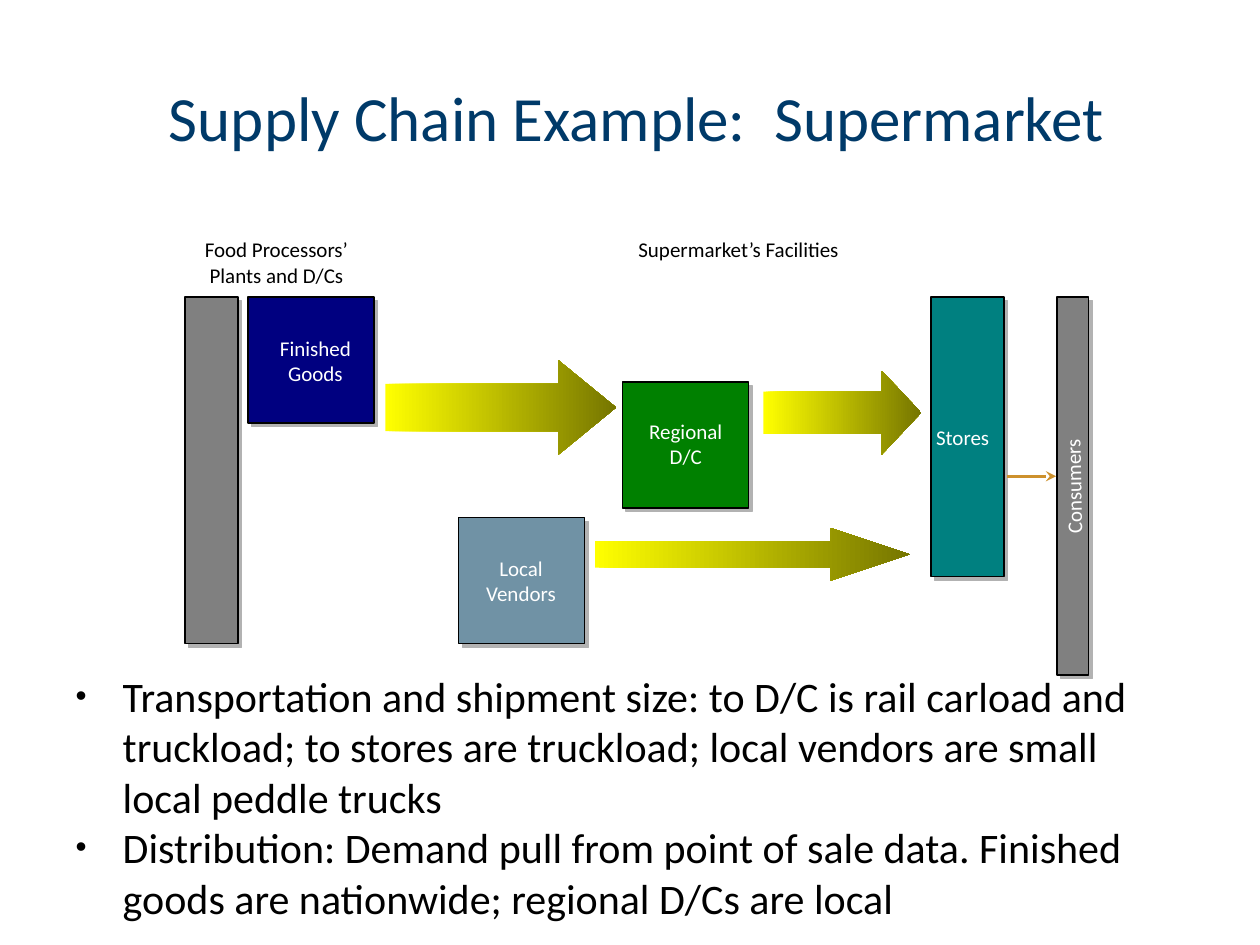
from lxml import etree
from pptx import Presentation
from pptx.dml.color import RGBColor
from pptx.enum.shapes import MSO_CONNECTOR, MSO_SHAPE
from pptx.enum.text import MSO_ANCHOR, MSO_AUTO_SIZE, PP_ALIGN
from pptx.oxml.ns import qn
from pptx.util import Cm, Pt

RECTANGLE = MSO_SHAPE.RECTANGLE
RIGHT_ARROW = MSO_SHAPE.RIGHT_ARROW
STRAIGHT = MSO_CONNECTOR.STRAIGHT
MIDDLE, TOP = MSO_ANCHOR.MIDDLE, MSO_ANCHOR.TOP
LEFT, CENTER = PP_ALIGN.LEFT, PP_ALIGN.CENTER
NO_FIT, GROW = MSO_AUTO_SIZE.NONE, MSO_AUTO_SIZE.SHAPE_TO_FIT_TEXT

COLORS = {
    "title": "003A69", "black": "000000", "white": "FFFFFF",
    "gray": "808080", "navy": "000080", "teal": "008080",
    "slate": "7092A5", "green": "008000", "shadow": "B2B2B2",
    "orange": "CD912D", "yellow": "FFFF00", "olive": "767600",
}

TOP_EDGE = 5.99
SIDE = 2.54

BOXES = [
    ("gray", 3.73, TOP_EDGE, 1.07, 6.99),
    ("navy", 5, TOP_EDGE, SIDE, SIDE),
    ("gray", 21.31, TOP_EDGE, 0.64, 7.62),
    ("teal", 18.77, TOP_EDGE, 1.47, 5.64),
    ("slate", 9.25, 10.44, SIDE, SIDE),
    ("green", 12.55, 7.7, SIDE, SIDE),
]

LABELS = [
    ("Food Processors’\vPlants and D/Cs", "black", (3.53, 4.65, 4.09, 1.27), CENTER, False, 0),
    ("Finished\vGoods", "white", (5.23, 6.63, 2.26, 1.27), CENTER, False, 0),
    ("Consumers", "white", (19.96, 8.97, 3.33, 0.76), LEFT, True, 268.9),
    ("Stores", "white", (18.62, 8.43, 1.83, 0.76), LEFT, False, 0),
    ("Regional\vD/C", "white", (12.67, 8.31, 2.31, 1.27), CENTER, False, 0),
    ("Local\vVendors", "white", (9.4, 11.07, 2.21, 1.27), CENTER, False, 0),
    ("Supermarket’s Facilities", "black", (12.62, 4.65, 8.26, 0.76), LEFT, True, 0),
]

ARROWS = [
    (0.47, 15.39, 7.47, 3.18, 1.7),
    (1.5, 11.99, 10.64, 6.35, 1.07),
    (0.61, 7.77, 7.26, 4.65, 1.91),
]

BULLETS = [
    "Transportation and shipment size: to D/C is rail carload and truckload; "
    "to stores are truckload; local vendors are small local peddle trucks",
    "Distribution: Demand pull from point of sale data. Finished goods are "
    "nationwide; regional D/Cs are local",
]


def rgb(name):
    return RGBColor.from_string(COLORS[name])


def apply(target, values):
    for name, value in values.items():
        setattr(target, name, value)


class SupplyChainSlide:
    font_name = "Calibri"

    def __init__(self, presentation):
        self.slide = presentation.slides.add_slide(presentation.slide_layouts[1])
        self.diagram = self.slide.shapes.add_group_shape().shapes

    def place(self, shape, area):
        apply(shape, dict(zip(("left", "top", "width", "height"), map(Cm, area))))

    def fill_paragraph(self, paragraph, text, size, color, alignment):
        paragraph.text = text
        apply(paragraph, {"alignment": alignment, "space_before": Pt(0)})
        for run in paragraph.runs:
            apply(run.font, {"name": self.font_name, "size": Pt(size)})
            run.font.color.rgb = rgb(color)

    def title(self, text, area):
        shape = self.slide.shapes.title
        self.place(shape, area)
        apply(shape.text_frame, {"vertical_anchor": MIDDLE, "auto_size": NO_FIT})
        self.fill_paragraph(shape.text_frame.paragraphs[0], text, 36, "title", CENTER)

    def bullets(self, texts, area):
        shape = self.slide.placeholders[1]
        self.place(shape, area)
        frame = shape.text_frame
        apply(frame, {"vertical_anchor": TOP, "auto_size": NO_FIT})
        for index, text in enumerate(texts):
            paragraph = frame.add_paragraph() if index else frame.paragraphs[0]
            self.fill_paragraph(paragraph, text, 24, "black", LEFT)
            properties = paragraph._p.get_or_add_pPr()
            properties.set("marL", str(Cm(0.95)))
            properties.set("indent", str(Cm(-0.95)))
            etree.SubElement(properties, qn("a:buSzPct")).set("val", "75000")
            etree.SubElement(properties, qn("a:buChar")).set("char", "•")

    def box(self, color, *area):
        shape = self.diagram.add_shape(RECTANGLE, *map(Cm, area))
        shape.fill.solid()
        shape.fill.fore_color.rgb = rgb(color)
        shape.line.color.rgb = rgb("black")
        shape.line.width = Pt(0.75)
        effects = etree.SubElement(shape._element.spPr, qn("a:effectLst"))
        shadow = etree.SubElement(effects, qn("a:outerShdw"), dist=str(Pt(2.8)),
                                  dir="2700000", algn="ctr", rotWithShape="0")
        etree.SubElement(shadow, qn("a:srgbClr")).set("val", COLORS["shadow"])

    def label(self, text, color, area, alignment, wrap, rotation):
        shape = self.diagram.add_textbox(*map(Cm, area))
        shape.rotation = rotation
        apply(shape.text_frame, {"word_wrap": wrap, "auto_size": GROW})
        self.fill_paragraph(shape.text_frame.paragraphs[0], text, 12, color, alignment)

    def connector(self, *ends):
        line = self.diagram.add_connector(STRAIGHT, *map(Cm, ends))
        line.line.color.rgb = rgb("orange")
        line.line.width = Pt(1.5)
        etree.SubElement(line.line._get_or_add_ln(), qn("a:tailEnd")).set("type", "stealth")
        etree.SubElement(line._element.spPr, qn("a:effectLst"))

    def block_arrow(self, head, *area):
        shape = self.diagram.add_shape(RIGHT_ARROW, *map(Cm, area))
        shape.shadow.inherit = False
        shape.adjustments[0] = 0.5
        shape.adjustments[1] = head
        shape.fill.gradient()
        shape.fill.gradient_angle = 0
        for stop, color in zip(shape.fill.gradient_stops, ("yellow", "olive")):
            stop.color.rgb = rgb(color)
        shape.line.fill.background()


def main():
    presentation = Presentation()
    apply(presentation, {"slide_width": Cm(25.4), "slide_height": Cm(19.05)})
    slide = SupplyChainSlide(presentation)
    slide.title("Supply Chain Example:  Supermarket", (2.08, 0.76, 21.51, 3.18))
    slide.bullets(BULLETS, (1.27, 13.39, 22.86, 4.9))
    for box in BOXES:
        slide.box(*box)
    for label in LABELS:
        slide.label(*label)
    slide.connector(20.29, 9.6, 21.29, 9.6)
    for arrow in ARROWS:
        slide.block_arrow(*arrow)
    presentation.save("out.pptx")


if __name__ == "__main__":
    main()
